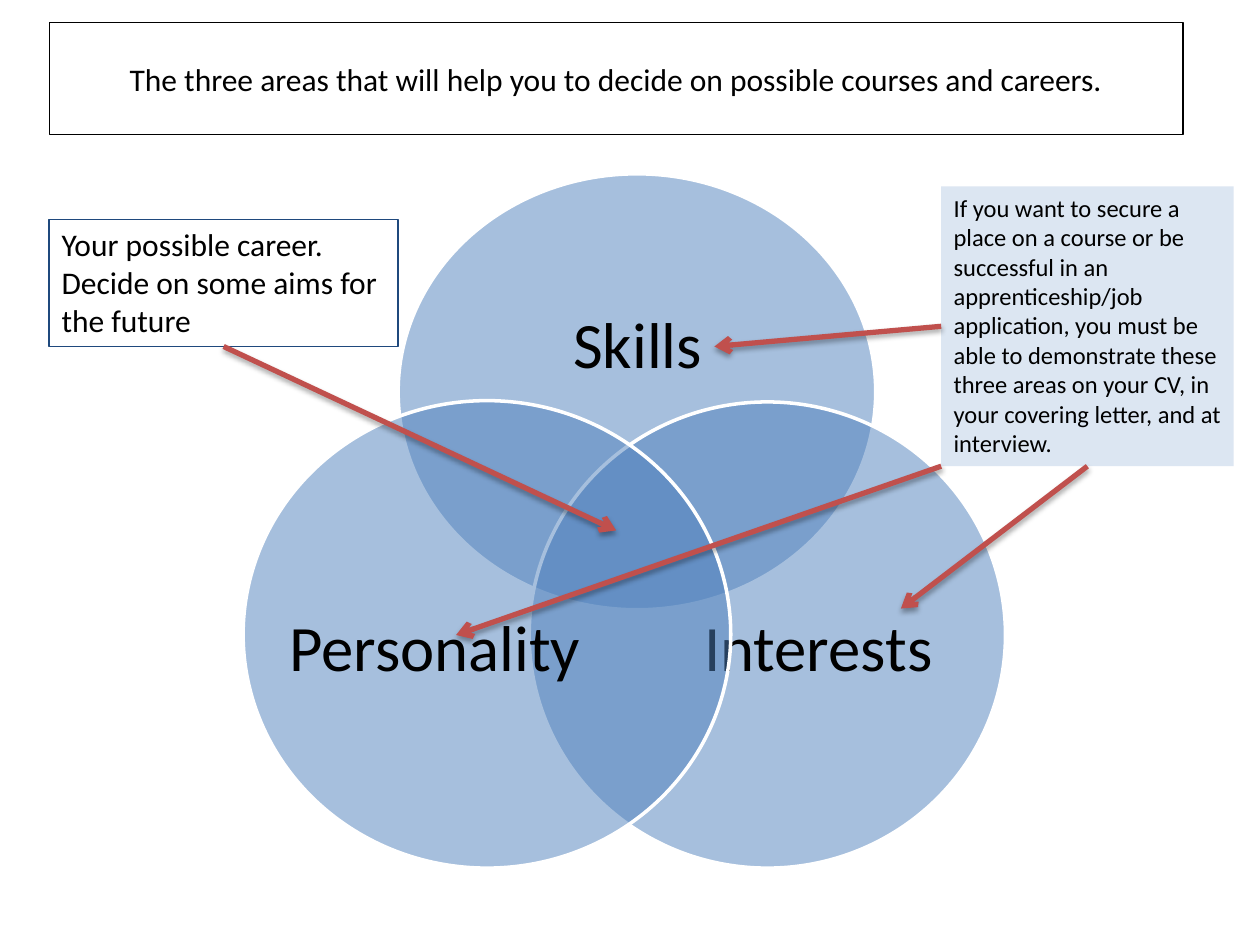
import pptx
import pptx.oxml
import pptx.oxml.ns
from lxml import etree
from pptx.dml.color import RGBColor
from pptx.enum.shapes import MSO_CONNECTOR, MSO_SHAPE
from pptx.enum.text import MSO_ANCHOR, PP_ALIGN
from pptx.util import Inches, Pt

BLACK = RGBColor(0x00, 0x00, 0x00)
WHITE = RGBColor(0xFF, 0xFF, 0xFF)
BLUE = RGBColor(0x4F, 0x81, 0xBD)
NAVY = RGBColor(0x1F, 0x49, 0x7D)
PALE_BLUE = RGBColor(0xDC, 0xE6, 0xF2)
RED = RGBColor(0xC0, 0x50, 0x4D)
FONT = "Calibri"
BOTTOM, LEFT = 2, 1

HEADING = "The three areas that will help you to decide on possible courses and careers."
HEADING_AT = (0.39, 0.18, 9, 0.89)

# label, circle position, label position; back to front
AREAS = [
    ("Skills", (3.16, 1.38, 3.79, 3.46), (3.67, 1.98, 2.78, 1.56)),
    ("Interests", (4.2, 3.19, 3.78, 3.7), (5.36, 4.14, 2.27, 2.04)),
    ("Personality", (1.93, 3.18, 3.87, 3.71), (2.29, 4.14, 2.32, 2.04)),
]

CAREER = ["Your possible career.", "Decide on some aims for the future"]
CAREER_AT = (0.39, 1.74, 2.77, 1.01)
ADVICE = [
    "If you want to secure a place on a course or be successful in an "
    "apprenticeship/job application, you must be able to demonstrate these three "
    "areas on your CV, in your covering letter, and at interview."
]
ADVICE_AT = (7.47, 1.48, 2.32, 2.22)

SHADOW = (
    f'<a:effectLst {pptx.oxml.ns.nsdecls("a")}>'
    f'<a:outerShdw blurRad="{Pt(3.1)}" dist="{Pt(1.8)}" dir="5400000" rotWithShape="0">'
    '<a:srgbClr val="000000"><a:alpha val="35000"/></a:srgbClr>'
    "</a:outerShdw></a:effectLst>"
)


def inches(values):
    return [Inches(value) for value in values]


def write(shape, paragraphs, size, align=PP_ALIGN.LEFT, anchor=MSO_ANCHOR.TOP,
          margin=None, line_spacing=None):
    frame = shape.text_frame
    frame.word_wrap = True
    frame.vertical_anchor = anchor
    if margin is not None:
        frame.margin_left = frame.margin_right = Inches(margin)
        frame.margin_top = frame.margin_bottom = Inches(margin)
    frame.text = "\n".join(paragraphs)
    for paragraph in frame.paragraphs:
        paragraph.alignment = align
        paragraph.line_spacing = line_spacing
        font = paragraph.runs[0].font
        font.name, font.size, font.color.rgb = FONT, Pt(size), BLACK


def outline(shape, color, width):
    shape.line.color.rgb = color
    shape.line.width = Pt(width)


def add_circle(slide, position):
    circle = slide.shapes.add_shape(MSO_SHAPE.OVAL, *inches(position))
    circle.shadow.inherit = False
    circle.fill.solid()
    circle.fill.fore_color.rgb = BLUE
    tint = circle.fill._xPr.find(".//" + pptx.oxml.ns.qn("a:srgbClr"))
    etree.SubElement(tint, pptx.oxml.ns.qn("a:alpha"), val="50000")
    outline(circle, WHITE, 2)


def add_arrow(slide, start, end, box=None, side=None):
    """Draw a shadowed arrow, joined to a side of the box when one is given."""
    arrow = slide.shapes.add_connector(MSO_CONNECTOR.STRAIGHT, *inches(start + end))
    if box is not None:
        arrow.begin_connect(box, side)
    outline(arrow, RED, 3)
    etree.SubElement(arrow.line._get_or_add_ln(), pptx.oxml.ns.qn("a:tailEnd"), type="arrow")
    arrow._element.spPr.append(pptx.oxml.parse_xml(SHADOW))


def main():
    deck = pptx.Presentation()
    deck.slide_width, deck.slide_height = Inches(10), Inches(7.5)
    slide = deck.slides.add_slide(deck.slide_layouts[5])

    title = slide.shapes.title
    title.left, title.top, title.width, title.height = inches(HEADING_AT)
    outline(title, BLACK, 0.75)
    write(title, [HEADING], 18, align=PP_ALIGN.CENTER, anchor=MSO_ANCHOR.MIDDLE)

    for label, circle_at, label_at in AREAS:
        add_circle(slide, circle_at)
        write(slide.shapes.add_textbox(*inches(label_at)), [label], 37,
              align=PP_ALIGN.CENTER, anchor=MSO_ANCHOR.MIDDLE, margin=0, line_spacing=0.9)

    career = slide.shapes.add_textbox(*inches(CAREER_AT))
    outline(career, NAVY, 0.75)
    write(career, CAREER, 18)

    advice = slide.shapes.add_textbox(*inches(ADVICE_AT))
    advice.fill.solid()
    advice.fill.fore_color.rgb = PALE_BLUE
    write(advice, ADVICE, 14)

    add_arrow(slide, (1.78, 2.75), (4.89, 4.21), career, BOTTOM)
    add_arrow(slide, (7.47, 2.59), (5.67, 2.75), advice, LEFT)
    add_arrow(slide, (7.47, 3.7), (3.62, 5.04))
    add_arrow(slide, (8.63, 3.7), (7.15, 4.83), advice, BOTTOM)

    deck.save("out.pptx")


if __name__ == "__main__":
    main()
